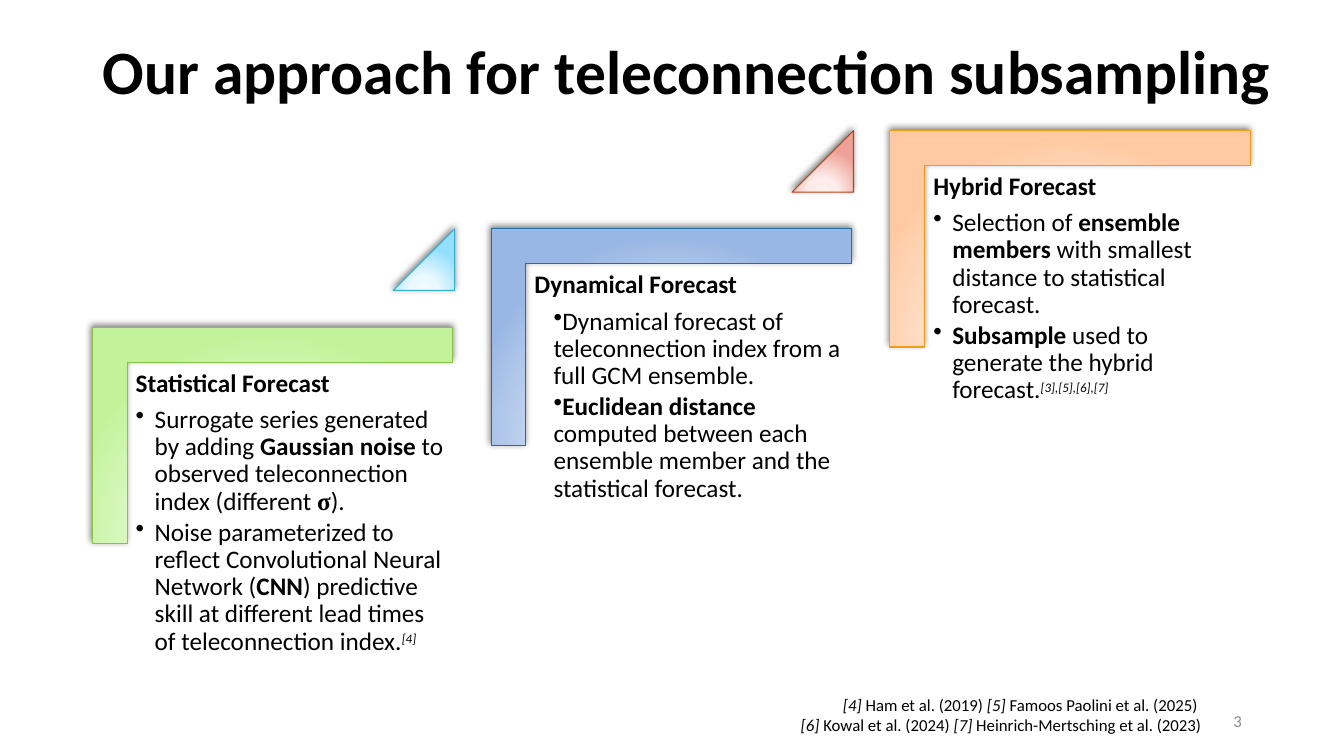
import pptx
import pptx.dml.color
import pptx.enum.shapes
import pptx.enum.text
import pptx.oxml
import pptx.oxml.ns
import pptx.util

Cm = pptx.util.Cm
Pt = pptx.util.Pt
SHAPES = pptx.enum.shapes.MSO_SHAPE
ALIGN = pptx.enum.text.PP_ALIGN
ANCHOR = pptx.enum.text.MSO_ANCHOR

# Gradients run from the light centre to the full tint
COLOURS = {
    "text": "000000", "number": "8C8C8C",
    "green": ("F6FFEF", "F2FDEB", "C2F39B"), "green line": "8BC145",
    "cyan": ("F0FAFF", "EAF8FF", "94DFFE"), "cyan line": "36AFCE",
    "blue": ("EFF4FD", "EBF1FA", "99B7E4"), "blue line": "1D6FA9",
    "red": ("FEF0EE", "FCECEA", "EEA196"), "red line": "B74919",
    "orange": ("FFF7F2", "FFF4EE", "FFCAA3"), "orange line": "F19D19",
}

# Run styles: b bold, i italic, ^ superscript, s symbol font
# Each step: heading, bullet first-line indent, bullets, corner, triangle
STEPS = [
    ("Statistical Forecast", -0.48, [
        [("Surrogate series generated by adding ", ""), ("Gaussian noise", "b"),
         (" to observed teleconnection index (different ", ""), ("σ", "bs"), (").", "")],
        [("Noise parameterized to reflect Convolutional Neural Network (", ""), ("CNN", "b"),
         (") predictive skill at different lead times of teleconnection index.", ""),
         ("[4]", "i^")],
    ], "green", "cyan"),
    ("Dynamical Forecast", 0, [
        [("Dynamical forecast of teleconnection index from a full GCM ensemble.", "")],
        [("Euclidean distance ", "b"),
         ("computed between each ensemble member and the statistical forecast.", "")],
    ], "blue", "red"),
    ("Hybrid Forecast", -0.48, [
        [("Selection of ", ""), ("ensemble members ", "b"),
         ("with smallest distance to statistical forecast.", "")],
        [("Subsample", "b"), (" used to generate the hybrid forecast.", ""),
         ("[3],[5],[6],[7]", "i^")],
    ], "orange", None),
]

REFERENCES = [
    [("[4] ", "i"), ("Ham et al. (2019) ", ""),
     ("[5] ", "i"), ("Famoos Paolini et al. (2025) ", "")],
    [("[6] ", "i"), ("Kowal et al. (2024) ", ""),
     ("[7]", "i"), (" Heinrich-Mertsching et al. (2023)", "")],
]


class SlideBuilder:
    font = "Calibri"
    symbol_font = "Times New Roman"

    def __init__(self, slide):
        self.slide = slide

    def runs(self, paragraph, parts, size, colour="text"):
        for text, style in parts:
            run = paragraph.add_run()
            run.text = text
            run.font.name = self.symbol_font if "s" in style else self.font
            run.font.size = Pt(16 if "^" in style else size)
            run.font.bold = "b" in style
            run.font.italic = "i" in style
            run.font.color.rgb = pptx.dml.color.RGBColor.from_string(COLOURS[colour])
            if "^" in style:
                run.font._element.set("baseline", "30000")

    def title(self, text, left, top, width, height):
        title = self.slide.shapes.title
        title.left, title.top, title.width, title.height = map(Cm, (left, top, width, height))
        frame = title.text_frame
        frame.auto_size = pptx.enum.text.MSO_AUTO_SIZE.NONE
        frame.vertical_anchor = ANCHOR.MIDDLE
        paragraph = frame.paragraphs[0]
        paragraph.alignment = ALIGN.LEFT
        paragraph.line_spacing = 0.9
        self.runs(paragraph, [(text, "b")], 44)

    def frame(self, left, top, width, height, wrap=True):
        box = self.slide.shapes.add_textbox(Cm(left), Cm(top), Cm(width), Cm(height))
        box.text_frame.word_wrap = wrap
        return box.text_frame

    def note(self, lines, left, top, width, height, colour="text", wrap=True):
        frame = self.frame(left, top, width, height, wrap)
        frame.vertical_anchor = ANCHOR.MIDDLE
        for index, parts in enumerate(lines):
            paragraph = frame.add_paragraph() if index else frame.paragraphs[0]
            paragraph.alignment = ALIGN.RIGHT
            self.runs(paragraph, parts, 12, colour)

    def step_text(self, heading, indent, bullets, left, top):
        frame = self.frame(left, top, 8.2, 7.19)
        frame.margin_left = frame.margin_right = Cm(0.19)
        frame.margin_top = frame.margin_bottom = Cm(0.19)
        paragraph = frame.paragraphs[0]
        paragraph.line_spacing = 0.9
        paragraph.space_after = Pt(6.3)
        self.runs(paragraph, [(heading, "b")], 18)
        for parts in bullets:
            paragraph = frame.add_paragraph()
            paragraph.level = 1
            paragraph.line_spacing = 0.9
            paragraph.space_after = Pt(2.7)
            self.runs(paragraph, parts, 18)
            properties = paragraph._p.get_or_add_pPr()
            properties.set("marL", str(Cm(0.48)))
            properties.set("indent", str(Cm(indent)))
            bullet = pptx.oxml.parse_xml(
                f'<a:buChar {pptx.oxml.ns.nsdecls("a")} char="•"/>')
            properties.append(bullet)

    def glossy(self, kind, colour, left, top, width, height, adjustments, rotation=0):
        shape = self.slide.shapes.add_shape(kind, Cm(left), Cm(top), Cm(width), Cm(height))
        shape.rotation = rotation
        for index, value in enumerate(adjustments):
            shape.adjustments[index] = value
        shape.line.color.rgb = pptx.dml.color.RGBColor.from_string(COLOURS[colour + " line"])
        shape.line.width = Pt(0.75)
        # Radial gradient centred below the shape
        namespace = pptx.oxml.ns.nsdecls("a")
        stops = "".join(
            f'<a:gs pos="{position}"><a:srgbClr val="{tint}"/></a:gs>'
            for position, tint in zip((0, 34000, 100000), COLOURS[colour]))
        gradient = pptx.oxml.parse_xml(
            f'<a:gradFill {namespace} rotWithShape="1"><a:gsLst>{stops}</a:gsLst>'
            '<a:path path="circle"><a:fillToRect l="50000" t="155000" r="50000" b="-55000"/>'
            '</a:path></a:gradFill>')
        properties = shape._element.spPr
        properties.find(pptx.oxml.ns.qn("a:prstGeom")).addnext(gradient)
        # Soft shadow
        shape.shadow.inherit = False
        properties.find(pptx.oxml.ns.qn("a:effectLst")).append(pptx.oxml.parse_xml(
            f'<a:outerShdw {namespace} blurRad="{Pt(5)}" dist="{Pt(2)}" dir="{245 * 60000}" '
            'rotWithShape="0"><a:srgbClr val="000000"><a:alpha val="50000"/></a:srgbClr>'
            '</a:outerShdw>'))


def main():
    presentation = pptx.Presentation()
    presentation.slide_width = Cm(33.87)
    presentation.slide_height = Cm(19.05)
    slide = presentation.slides.add_slide(presentation.slide_layouts[5])
    builder = SlideBuilder(slide)
    builder.title("Our approach for teleconnection subsampling", 2.34, 0.03, 30.18, 3.68)

    # Rising staircase of steps
    for index, (heading, indent, bullets, corner, triangle) in enumerate(STEPS):
        left = 4.14 + 10.05 * index
        top = 6.43 - 2.48 * index
        builder.glossy(SHAPES.CORNER, corner, left, top, 5.46, 9.09, (0.161, 0.161), 90)
        builder.step_text(heading, indent, bullets, left - 0.91, top + 2.72)
        if triangle:
            builder.glossy(SHAPES.ISOSCELES_TRIANGLE, triangle,
                           left + 5.77, top - 0.66, 1.55, 1.55, (1,))

    # References and slide number
    builder.note(REFERENCES, 19.81, 17.37, 10.72, 1.28, wrap=False)
    builder.note([[("3", "")]], 23.93, 17.65, 7.62, 1.01, "number")
    presentation.save("out.pptx")


if __name__ == "__main__":
    main()
